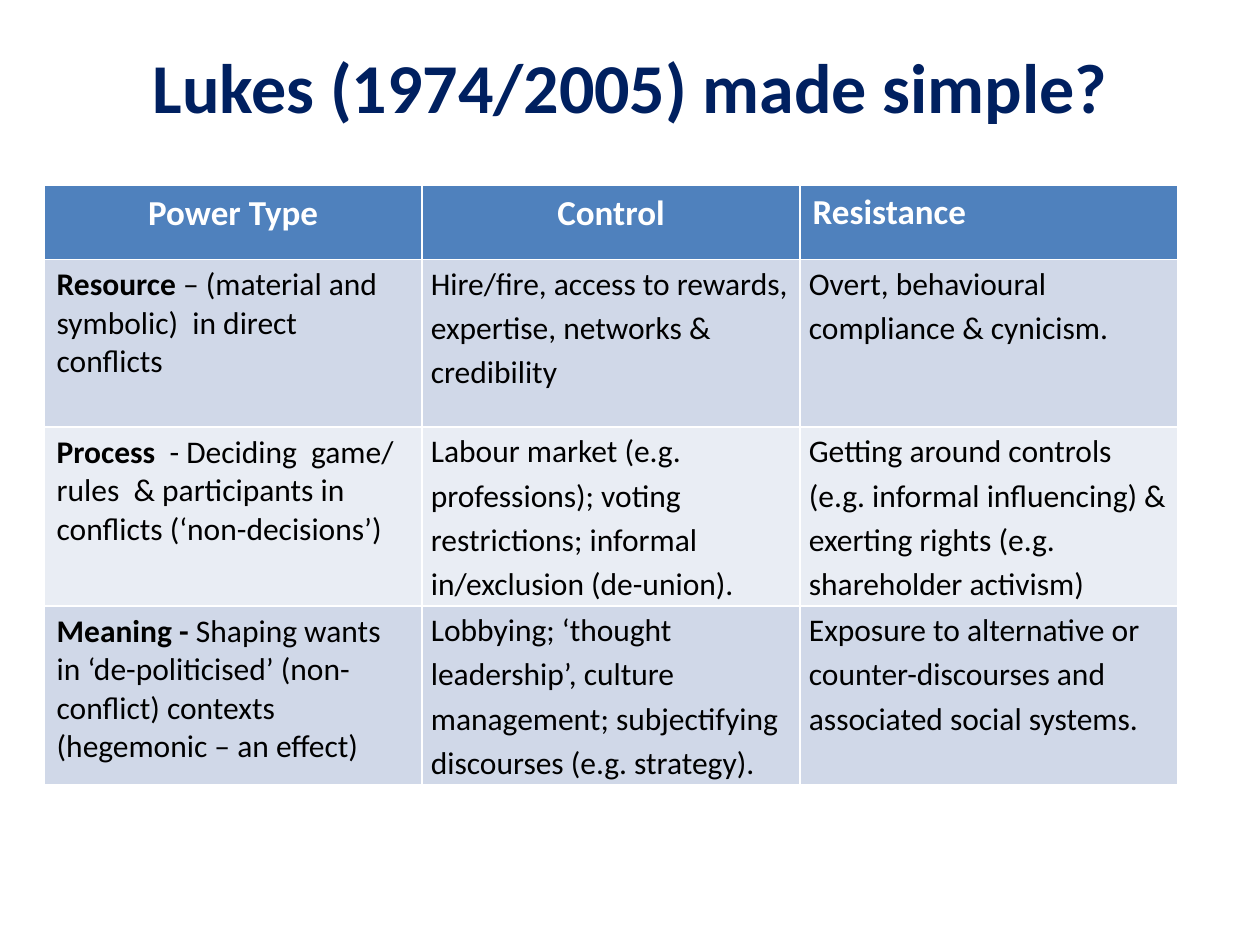
"""Build a slide with a table of three power types, their control and resistance."""
from pptx import Presentation
from pptx.dml.color import RGBColor
from pptx.enum.text import MSO_ANCHOR, PP_ALIGN
from pptx.util import Inches, Pt

TITLE = "Lukes (1974/2005) made simple?"
HEADERS = ["Power Type", "Control", "Resistance"]
ROWS = [
    (("Resource ", "– (material and symbolic)  in direct conflicts"),
     "Hire/fire, access to rewards, expertise, networks & credibility",
     "Overt, behavioural compliance & cynicism."),
    (("Process", "  - Deciding  game/ rules  & participants in conflicts (‘non-decisions’)"),
     "Labour market (e.g. professions); voting restrictions; informal in/exclusion (de-union).",
     "Getting around controls (e.g. informal influencing) & exerting rights (e.g. shareholder activism)"),
    (("Meaning - ", "Shaping wants in ‘de-politicised’ (non-conflict) contexts  (hegemonic – an effect)"),
     "Lobbying; ‘thought leadership’, culture management; subjectifying discourses (e.g. strategy).",
     "Exposure to alternative or counter-discourses and associated social systems."),
]
COLORS = {"title": "002060", "header": "4F81BD", "odd": "D0D8E8",
          "even": "E9EDF4", "white": "FFFFFF", "text": "000000"}
FONT = "Calibri"
COL_WIDTH = 3
ROW_HEIGHTS = [0.59, 1.33, 1.42, 1.42]


def rgb(name):
    return RGBColor.from_string(COLORS[name])


def add_run(p, text, size, color, bold):
    r = p.add_run()
    r.text = text
    r.font.name = FONT
    r.font.size = Pt(size)
    r.font.bold = bold
    r.font.color.rgb = rgb(color)


def fill_cell(cell, runs, fill, size, color, spaced, centered=False):
    cell.fill.solid()
    cell.fill.fore_color.rgb = rgb(fill)
    p = cell.text_frame.paragraphs[0]
    if spaced:
        cell.margin_left = cell.margin_right = Inches(0.07)
        cell.margin_top = cell.margin_bottom = 0
        p.line_spacing = 1.15
        p.space_before = p.space_after = Pt(2)
    if centered:
        p.alignment = PP_ALIGN.CENTER
    for text, bold in runs:
        add_run(p, text, size, color, bold)


def add_title(s):
    title = s.shapes.title
    title.left, title.top = Inches(0.5), Inches(0.05)
    title.width, title.height = Inches(9), Inches(1.25)
    tf = title.text_frame
    tf.vertical_anchor = MSO_ANCHOR.MIDDLE
    p = tf.paragraphs[0]
    p.alignment = PP_ALIGN.CENTER
    add_run(p, TITLE, 40, "title", True)


def add_power_table(s):
    table = s.shapes.add_table(
        len(ROW_HEIGHTS), len(HEADERS), Inches(0.35), Inches(1.47),
        Inches(COL_WIDTH * len(HEADERS)), Inches(sum(ROW_HEIGHTS))).table
    for col in table.columns:
        col.width = Inches(COL_WIDTH)
    for row, height in zip(table.rows, ROW_HEIGHTS):
        row.height = Inches(height)
    for c, text in enumerate(HEADERS):
        centered = c < 2
        fill_cell(table.cell(0, c), [(text, True)], "header", 20, "white", centered, centered)
    for r, ((term, meaning), *details) in enumerate(ROWS, 1):
        fill = "odd" if r % 2 else "even"
        fill_cell(table.cell(r, 0), [(term, True), (meaning, False)], fill, 18, "text", False)
        for c, text in enumerate(details, 1):
            fill_cell(table.cell(r, c), [(text, False)], fill, 18, "text", True)


def main():
    prs = Presentation()
    prs.slide_width, prs.slide_height = Inches(10), Inches(7.5)
    s = prs.slides.add_slide(prs.slide_layouts[5])
    add_title(s)
    add_power_table(s)
    prs.save("out.pptx")


if __name__ == "__main__":
    main()
